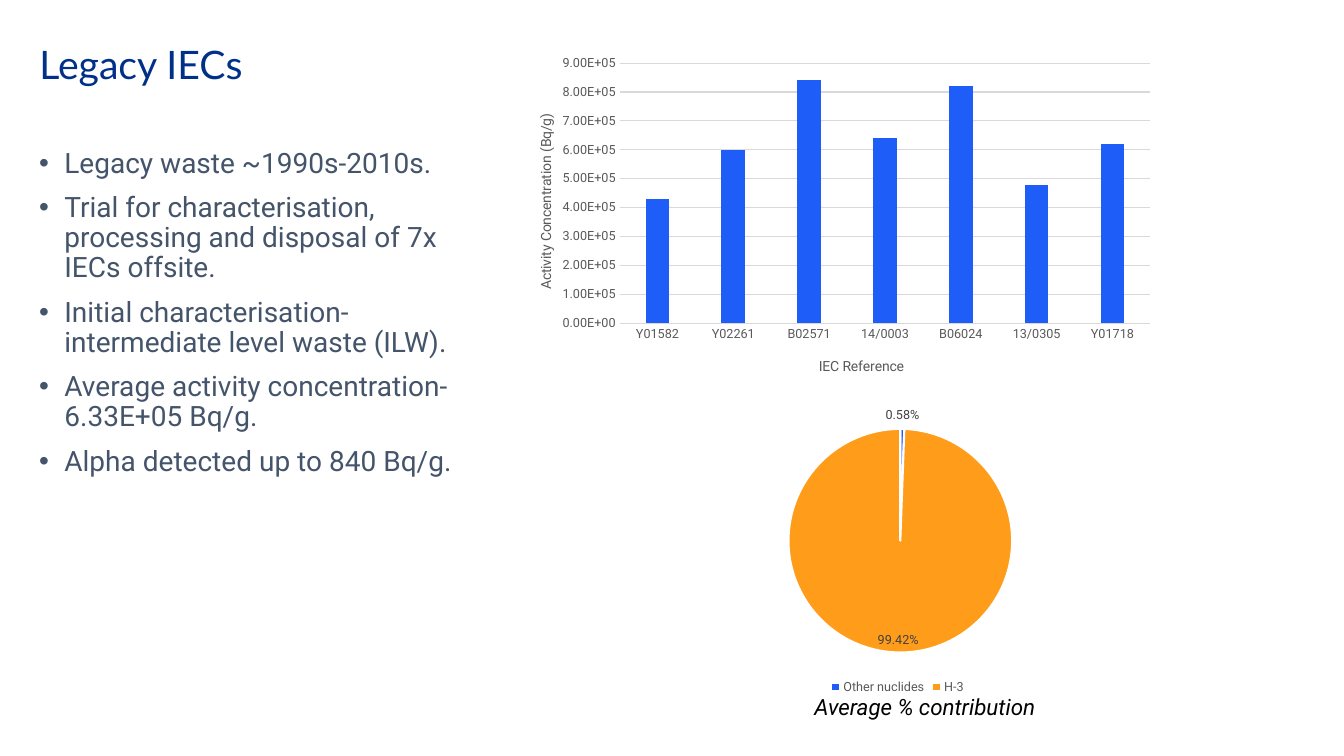
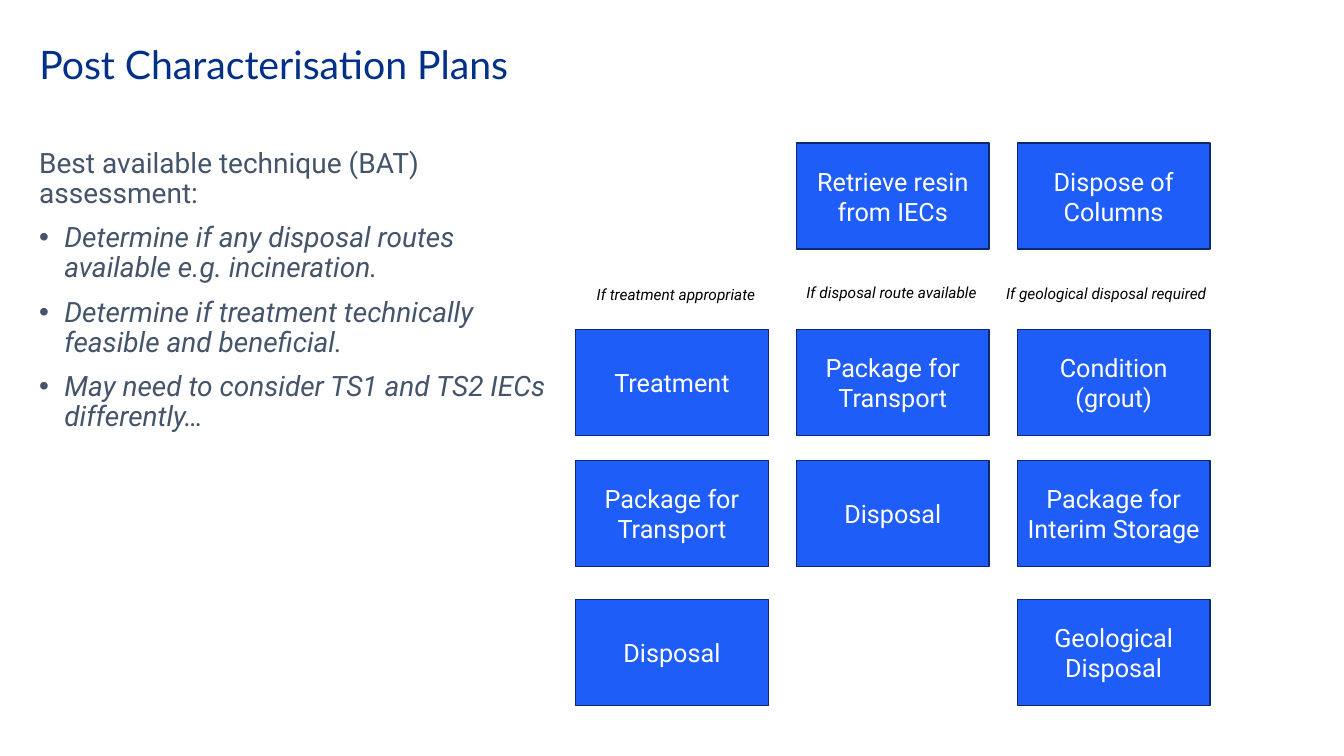
from lxml import etree
from pptx import Presentation
from pptx.chart.data import CategoryChartData
from pptx.dml.color import RGBColor
from pptx.enum.chart import (XL_CHART_TYPE, XL_LABEL_POSITION,
                             XL_LEGEND_POSITION, XL_TICK_MARK)
from pptx.enum.shapes import MSO_SHAPE
from pptx.enum.text import MSO_ANCHOR, PP_ALIGN
from pptx.oxml.ns import qn
from pptx.util import Inches, Pt

COLUMN, PIE = XL_CHART_TYPE.COLUMN_CLUSTERED, XL_CHART_TYPE.PIE
RECT = MSO_SHAPE.RECTANGLE
TOP, MIDDLE = MSO_ANCHOR.TOP, MSO_ANCHOR.MIDDLE
LEFT, CENTER = PP_ALIGN.LEFT, PP_ALIGN.CENTER
NO_TICK = XL_TICK_MARK.NONE

NAVY = RGBColor(0x00, 0x30, 0x88)
SLATE = RGBColor(0x44, 0x54, 0x6A)
BLUE = RGBColor(0x1E, 0x5D, 0xF8)
EDGE = RGBColor(0x0D, 0x29, 0x6D)
ORANGE = RGBColor(0xFF, 0x9D, 0x1B)
GRAY = RGBColor(0x59, 0x59, 0x59)
DARK = RGBColor(0x40, 0x40, 0x40)
PALE = RGBColor(0xD9, 0xD9, 0xD9)
WHITE = RGBColor(0xFF, 0xFF, 0xFF)
BLACK = RGBColor(0x00, 0x00, 0x00)

TITLE = dict(name="Lato", size=Pt(28), bold=False, color=NAVY)
BODY = dict(name="Roboto", size=Pt(20), color=SLATE)
BOX = dict(name="Roboto", size=Pt(18), color=WHITE)
NOTE = dict(name="Roboto", size=Pt(11), italic=True, color=BLACK)
CAPTION = {**NOTE, "size": Pt(16)}
AXIS = dict(name="Roboto", size=Pt(9), bold=False, color=GRAY)
HEAD = {**AXIS, "size": Pt(10)}
LABEL = {**AXIS, "color": DARK}


def style(font, form):
    for key, value in form.items():
        if key == "color":
            font.color.rgb = value
        else:
            setattr(font, key, value)


def arrange(part, index, **spots):
    """Place a chart part by fractions of the chart area."""
    for old in part.findall(qn("c:layout")):
        part.remove(old)
    layout = etree.Element(qn("c:layout"))
    manual = etree.SubElement(layout, qn("c:manualLayout"))
    if "w" in spots:
        etree.SubElement(manual, qn("c:layoutTarget"), val="inner")
    for axis in "xy":
        etree.SubElement(manual, qn(f"c:{axis}Mode"), val="edge")
    for key, value in spots.items():
        etree.SubElement(manual, qn(f"c:{key}"), val=str(value))
    part.insert(index, layout)


deck = Presentation()
deck.slide_width, deck.slide_height = Inches(13.33), Inches(7.5)

# Titles and body text: each line is (text, bullet, italic)
pages = [
    ("Legacy IECs", 4.31, [
        ("Legacy waste ~1990s-2010s.", True, False),
        ("Trial for characterisation, processing and disposal of 7x "
         "IECs offsite.", True, False),
        ("Initial characterisation- intermediate level waste (ILW).",
         True, False),
        ("Average activity concentration- 6.33E+05 Bq/g.", True, False),
        ("Alpha detected up to 840 Bq/g.", True, False),
    ]),
    ("Post Characterisation Plans", 5.28, [
        ("Best available technique (BAT) assessment:", False, False),
        ("Determine if any disposal routes available e.g. incineration.",
         True, True),
        ("Determine if treatment technically feasible and beneficial.",
         True, True),
        ("May need to consider TS1 and TS2 IECs differently…", True, True),
    ]),
]
slides = []
for name, width, lines in pages:
    slide = deck.slides.add_slide(deck.slide_layouts[5])
    slides.append(slide)
    title = slide.shapes.title
    title.left, title.top = Inches(0.29), Inches(0.4)
    title.width, title.height = Inches(6.92), Inches(0.63)
    frame = title.text_frame
    frame.text = name
    frame.vertical_anchor = TOP
    para = frame.paragraphs[0]
    para.alignment, para.line_spacing = LEFT, 0.9
    style(para.runs[0].font, TITLE)

    frame = slide.shapes.add_textbox(Inches(0.29), Inches(1.43),
                                     Inches(width), Inches(4.76)).text_frame
    frame.word_wrap = True
    for i, (text, bullet, italic) in enumerate(lines):
        para = frame.add_paragraph() if i else frame.paragraphs[0]
        if bullet:
            props = para._p.get_or_add_pPr()
            props.set("marL", str(Inches(0.25)))
            props.set("indent", str(-Inches(0.25)))
            etree.SubElement(props, qn("a:buFont"), typeface="Arial")
            etree.SubElement(props, qn("a:buChar"), char="•")
        para.line_spacing = 0.9
        if i:
            para.space_before = Pt(10)
        run = para.add_run()
        run.text = text
        style(run.font, {**BODY, "italic": italic})

legacy, plans = slides

# Contribution pie
data = CategoryChartData(number_format="0.00%")
data.categories = ["Other nuclides", "H-3"]
data.add_series("Series 1", [0.0058, 0.9942])
chart = legacy.shapes.add_chart(PIE, Inches(6.41), Inches(3.89), Inches(4.99),
                                Inches(3.04), data).chart
chart.has_title = False
chart.has_legend = True
chart.legend.position = XL_LEGEND_POSITION.BOTTOM
chart.legend.include_in_layout = False
style(chart.legend.font, AXIS)
plot = chart.plots[0]
plot.vary_by_categories = True
for i, color in enumerate([BLUE, ORANGE]):
    form = plot.series[0].points[i].format
    form.fill.solid()
    form.fill.fore_color.rgb = color
    form.line.color.rgb = WHITE
    form.line.width = Pt(1.5)
plot.has_data_labels = True
labels = plot.data_labels
labels.show_value = True
labels.number_format, labels.number_format_is_linked = "0.00%", False
labels.position = XL_LABEL_POSITION.BEST_FIT
style(labels.font, LABEL)
arrange(chart._chartSpace.chart.plotArea, 0, x=0.28, y=0.12, w=0.45, h=0.73)

# Activity columns
data = CategoryChartData(number_format="0.00E+00")
data.categories = ["Y01582", "Y02261", "B02571", "14/0003", "B06024",
                   "13/0305", "Y01718"]
data.add_series("Series 1", [430000, 600000, 840000, 640000, 820000,
                             480000, 620000])
chart = legacy.shapes.add_chart(COLUMN, Inches(5.04), Inches(0.49),
                                Inches(6.5), Inches(3.4), data).chart
chart.has_title = chart.has_legend = False
plot = chart.plots[0]
plot.vary_by_categories = False
plot.gap_width, plot.overlap = 219, -27
fill = plot.series[0].format.fill
fill.solid()
fill.fore_color.rgb = BLUE
cats, vals = chart.category_axis, chart.value_axis
for axis, text, x, y in [(cats, "IEC Reference", 0.47, 0.89),
                         (vals, "Activity Concentration (Bq/g)", 0.04, 0.18)]:
    axis.major_tick_mark = axis.minor_tick_mark = NO_TICK
    style(axis.tick_labels.font, AXIS)
    frame = axis.axis_title.text_frame
    frame.text = text
    style(frame.paragraphs[0].runs[0].font, HEAD)
    arrange(axis.axis_title._element, 1, x=x, y=y)
vals.minimum_scale, vals.maximum_scale, vals.major_unit = 0, 900000, 100000
vals.tick_labels.number_format = "0.00E+00"
vals.tick_labels.number_format_is_linked = False
vals.format.line.fill.background()
vals.has_major_gridlines = True
for line in (cats.format.line, vals.major_gridlines.format.line):
    line.color.rgb = PALE
    line.width = Pt(0.75)
arrange(chart._chartSpace.chart.plotArea, 0, x=0.17, y=0.04, w=0.81, h=0.76)

# Route boxes: one list per row, None where a cell is free
rows = [
    (1.42, [None, "Retrieve resin from IECs", "Dispose of Columns"]),
    (3.27, ["Treatment", "Package for Transport", "Condition (grout)"]),
    (4.57, ["Package for Transport", "Disposal",
            "Package for Interim Storage"]),
    (5.95, ["Disposal", None, "Geological Disposal"]),
]
for top, names in rows:
    for col, name in enumerate(names):
        if not name:
            continue
        box = plans.shapes.add_shape(RECT, Inches(5.71 + 2.19 * col),
                                     Inches(top), Inches(1.91), Inches(1.05))
        box.shadow.inherit = False
        box.fill.solid()
        box.fill.fore_color.rgb = BLUE
        box.line.color.rgb = EDGE
        box.line.width = Pt(1)
        frame = box.text_frame
        frame.word_wrap = True
        frame.vertical_anchor = MIDDLE
        frame.text = name
        para = frame.paragraphs[0]
        para.alignment = CENTER
        style(para.runs[0].font, BOX)

# Chart caption and route conditions
notes = [
    (legacy, "Average % contribution", 7.98, 6.83, 2.64, 0.37, CAPTION),
    (plans, "If treatment appropriate", 5.82, 2.78, 2.08, 0.29, NOTE),
    (plans, "If disposal route available", 7.9, 2.76, 2.08, 0.29, NOTE),
    (plans, "If geological disposal required", 9.88, 2.77, 2.33, 0.29, NOTE),
]
for slide, text, *spot, form in notes:
    frame = slide.shapes.add_textbox(*map(Inches, spot)).text_frame
    frame.word_wrap = True
    frame.text = text
    style(frame.paragraphs[0].runs[0].font, form)

deck.save("out.pptx")
